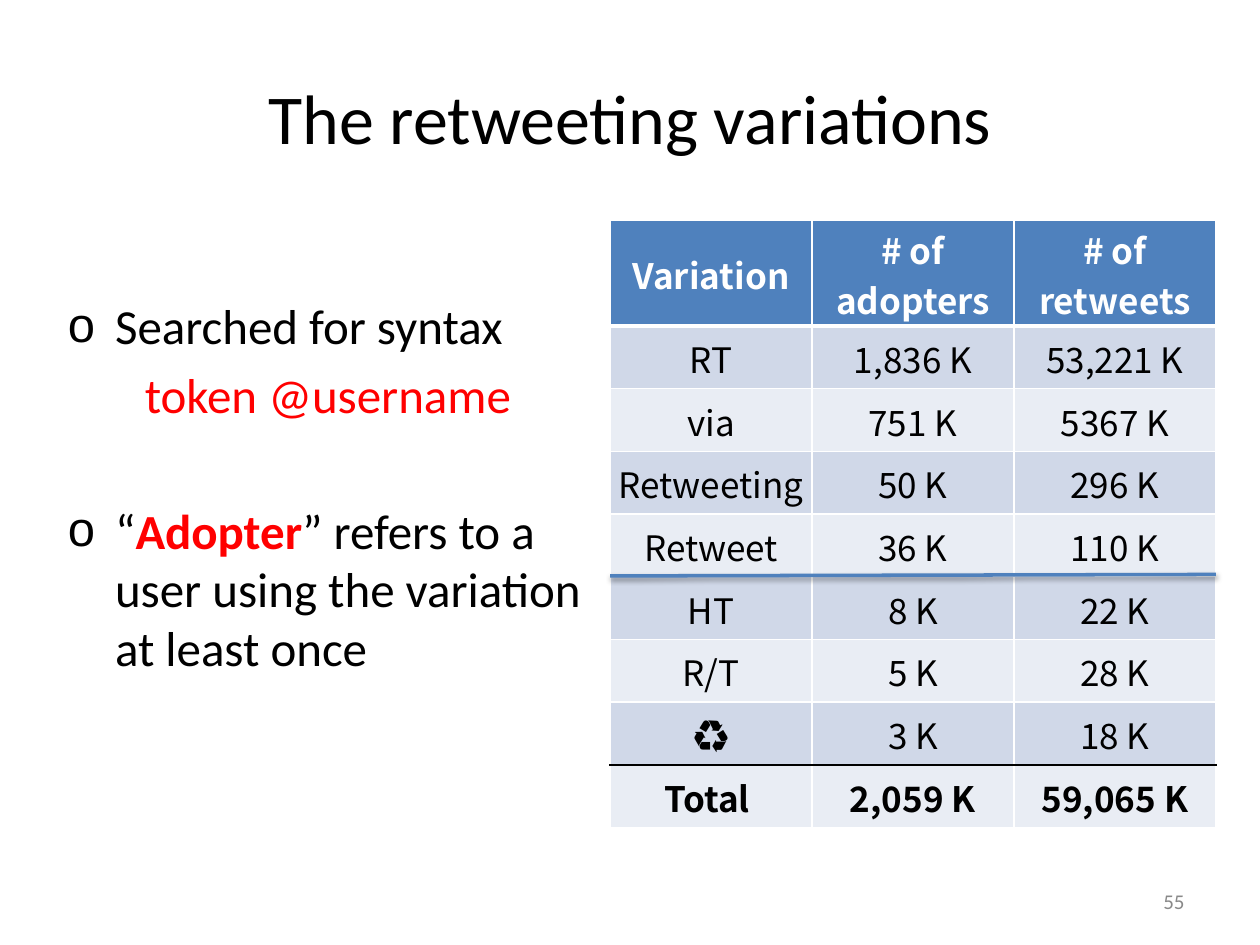
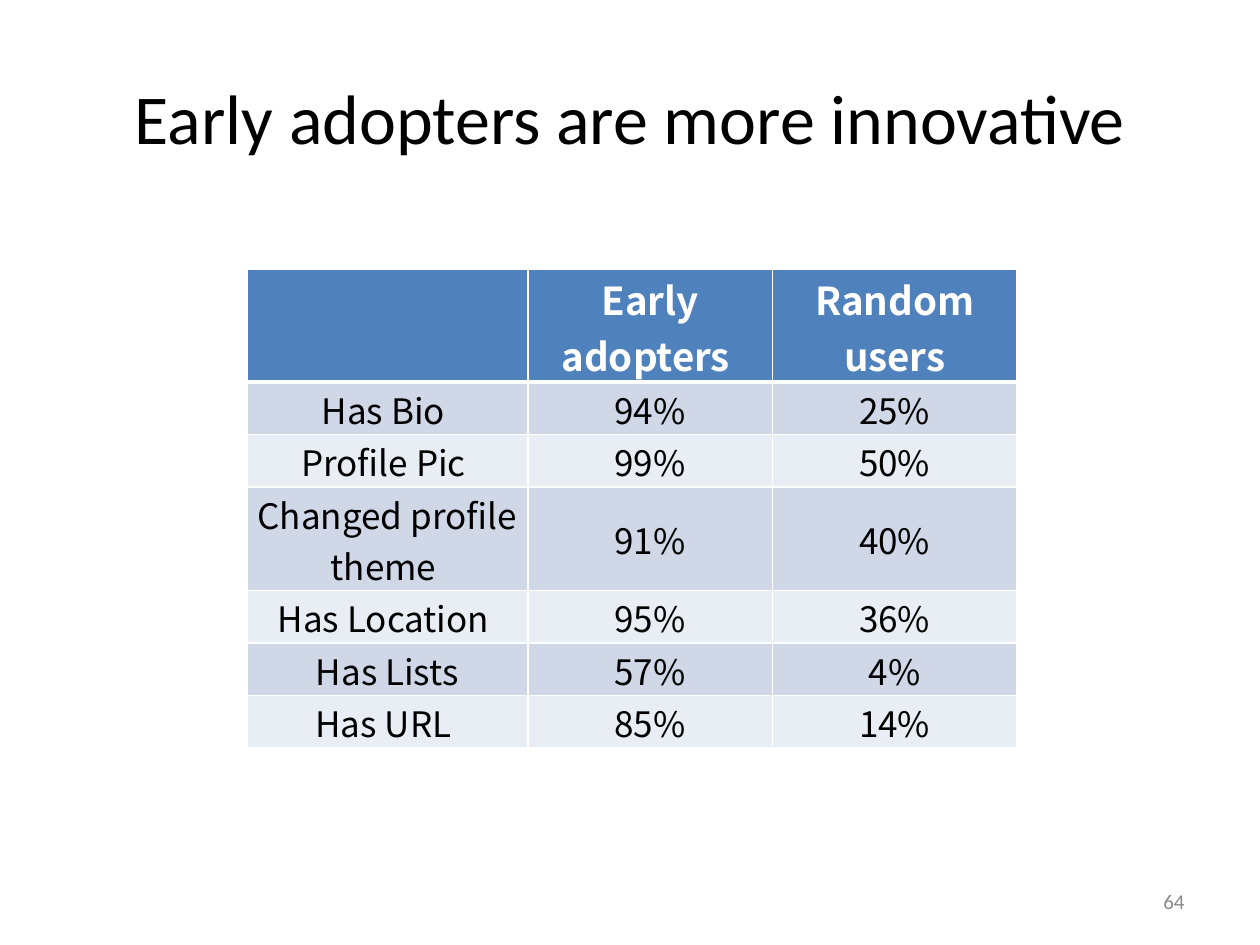
from lxml import etree
from pptx import Presentation
from pptx.dml.color import RGBColor
from pptx.enum.shapes import MSO_CONNECTOR
from pptx.enum.text import MSO_ANCHOR, PP_ALIGN
from pptx.oxml import parse_xml
from pptx.oxml.ns import nsdecls, qn
from pptx.util import Cm, Pt

MIDDLE = MSO_ANCHOR.MIDDLE
TOP = MSO_ANCHOR.TOP
LEFT, CENTER, RIGHT = PP_ALIGN.LEFT, PP_ALIGN.CENTER, PP_ALIGN.RIGHT
STRAIGHT = MSO_CONNECTOR.STRAIGHT

BODY_FONT, TABLE_FONT, SYMBOL_FONT = "Calibri", "Noto Sans CJK KR", "Arial"
BLACK, WHITE, RED, GREY = "000000", "FFFFFF", "FF0000", "898989"
BLUE, BAND_DARK, BAND_LIGHT = "4F81BD", "D0D8E8", "E9EDF4"

TITLE_BOX = (1.27, 0.76, 22.86, 3.18)
NUMBER_BOX = (18.21, 17.65, 5.92, 1.02)
BULLET_INDENT = 0.95

VARIATIONS = [
    ("Variation", "# of adopters", "# of retweets"),
    ("RT", "1,836 K", "53,221 K"),
    ("via", "751 K", "5367 K"),
    ("Retweeting", "50 K", "296 K"),
    ("Retweet", "36 K", "110 K"),
    ("HT", "8 K", "22 K"),
    ("R/T", "5 K", "28 K"),
    ("♻", "3 K", "18 K"),
    ("Total ", "2,059 K", "59,065 K"),
]
INNOVATION = [
    ("", "Early adopters ", "Random users"),
    ("Has Bio ", "94%", "25%"),
    ("Profile Pic ", "99%", "50%"),
    ("Changed profile theme ", "91%", "40%"),
    ("Has Location ", "95%", "36%"),
    ("Has Lists", "57%", "4%"),
    ("Has URL ", "85%", "14%"),
]


def rgb(value):
    return RGBColor.from_string(value)


def add_span(para, text, size=28, font=BODY_FONT, color=BLACK, bold=False):
    span = para.add_run()
    span.text = text
    span.font.size = Pt(size)
    span.font.name = font
    span.font.bold = bold
    span.font.color.rgb = rgb(color)


def set_paragraph(para, spans, align=LEFT, before=0, indent=0, bullet=None):
    """Fill a paragraph from (text, format) pairs; indent is in centimetres."""
    para.alignment = align
    para.space_before = Pt(before)
    properties = para._p.get_or_add_pPr()
    properties.set("marL", str(Cm(indent)))
    if bullet:
        properties.set("indent", str(-Cm(indent)))
        etree.SubElement(properties, qn("a:buFont"), typeface=SYMBOL_FONT)
        etree.SubElement(properties, qn("a:buChar"), char=bullet)
    for text, style in spans:
        add_span(para, text, **style)


def add_text_box(page, box, anchor=TOP):
    frame = page.shapes.add_textbox(*map(Cm, box)).text_frame
    frame.word_wrap = True
    frame.vertical_anchor = anchor
    return frame


def add_page(deck, title, number):
    page = deck.slides.add_slide(deck.slide_layouts[5])
    heading = page.shapes.title
    heading.left, heading.top, heading.width, heading.height = map(Cm, TITLE_BOX)
    heading.text_frame.vertical_anchor = MIDDLE
    set_paragraph(heading.text_frame.paragraphs[0], [(title, {"size": 40})], CENTER)
    frame = add_text_box(page, NUMBER_BOX, MIDDLE)
    set_paragraph(frame.paragraphs[0],
                  [(str(number), {"size": 12, "color": GREY})], RIGHT)
    return page


def set_borders(cell, top, bottom):
    """Draw thin white sides and the given (colour, points) top and bottom."""
    properties = cell._tc.get_or_add_tcPr()
    side = (WHITE, 1)
    for tag, (color, width) in zip(("lnL", "lnR", "lnT", "lnB"),
                                   (side, side, top, bottom)):
        line = etree.SubElement(properties, qn(f"a:{tag}"), w=str(Pt(width)))
        fill = etree.SubElement(line, qn("a:solidFill"))
        etree.SubElement(fill, qn("a:srgbClr"), val=color)


def add_banded_table(page, rows, origin, widths, heights, header_size=20,
                     has_total=False):
    """Place a table at origin, with one width per column and height per row."""
    last = len(rows) - 1
    table = page.shapes.add_table(len(rows), len(widths), *map(
        Cm, (*origin, sum(widths), sum(heights)))).table
    for column, width in zip(table.columns, widths):
        column.width = Cm(width)
    rules = [(WHITE, 1)] * (len(rows) + 1)
    rules[1] = (WHITE, 3)
    if has_total:
        rules[last] = (BLACK, 1)

    for index, (values, height) in enumerate(zip(rows, heights)):
        is_header = index == 0
        table.rows[index].height = Cm(height)
        band = BLUE if is_header else BAND_DARK if index % 2 else BAND_LIGHT
        style = {"size": header_size if is_header else 20,
                 "color": WHITE if is_header else BLACK,
                 "bold": is_header or (has_total and index == last)}
        for cell, text in zip(table.rows[index].cells, values):
            set_borders(cell, rules[index], rules[index + 1])
            cell.fill.solid()
            cell.fill.fore_color.rgb = rgb(band)
            cell.vertical_anchor = MIDDLE
            cell.margin_left = cell.margin_right = cell.margin_top = Cm(0.03)
            cell.margin_bottom = 0
            if text:
                font = SYMBOL_FONT if text == "♻" else TABLE_FONT
                set_paragraph(cell.text_frame.paragraphs[0],
                              [(text, {"font": font, **style})], CENTER)


def add_divider(page, start, end):
    line = page.shapes.add_connector(STRAIGHT, *map(Cm, (*start, *end)))
    line.line.color.rgb = rgb(BLUE)
    line.line.width = Pt(2)
    line._element.spPr.append(parse_xml(
        f'<a:effectLst {nsdecls("a")}>'
        f'<a:outerShdw blurRad="{Pt(3.1)}" dist="{Pt(1.6)}" dir="5400000" '
        f'rotWithShape="0"><a:srgbClr val="{BLACK}"><a:alpha val="38000"/>'
        '</a:srgbClr></a:outerShdw></a:effectLst>'))


def add_definitions(page, box):
    frame = add_text_box(page, box)
    search, syntax, adopter = (frame.paragraphs[0], frame.add_paragraph(),
                               frame.add_paragraph())
    set_paragraph(search, [("Searched for syntax", {})],
                  indent=BULLET_INDENT, bullet="o")
    set_paragraph(syntax, [("token @username", {"color": RED})],
                  before=5.5, indent=1.55)
    set_paragraph(adopter, [
        ("“", {}),
        ("Adopter", {"color": RED, "bold": True}),
        ("” refers to a user using the variation at least once", {}),
    ], before=44, indent=BULLET_INDENT, bullet="o")


def build_variations(deck):
    page = add_page(deck, "The retweeting variations", 55)
    add_definitions(page, (1.12, 5.84, 11.23, 11.16))
    left, top, widths = 12.3, 4.45, [4.07] * 3
    add_banded_table(page, VARIATIONS, (left, top), widths,
                     [2.12] + [1.265] * 8, has_total=True)
    add_divider(page, (left, top + 7.16), (left + sum(widths), top + 7.13))


def build_innovation(deck):
    page = add_page(deck, "Early adopters are more innovative", 64)
    one_line, two_lines = 1.06, 2.08
    heights = [2.27] + [one_line] * 2 + [two_lines] + [one_line] * 3
    add_banded_table(page, INNOVATION, (4.98, 5.43), [5.66, 4.93, 4.93],
                     heights, header_size=22)


def main():
    deck = Presentation()
    deck.slide_width, deck.slide_height = Cm(25.4), Cm(19.05)
    build_variations(deck)
    build_innovation(deck)
    deck.save("out.pptx")


if __name__ == "__main__":
    main()
